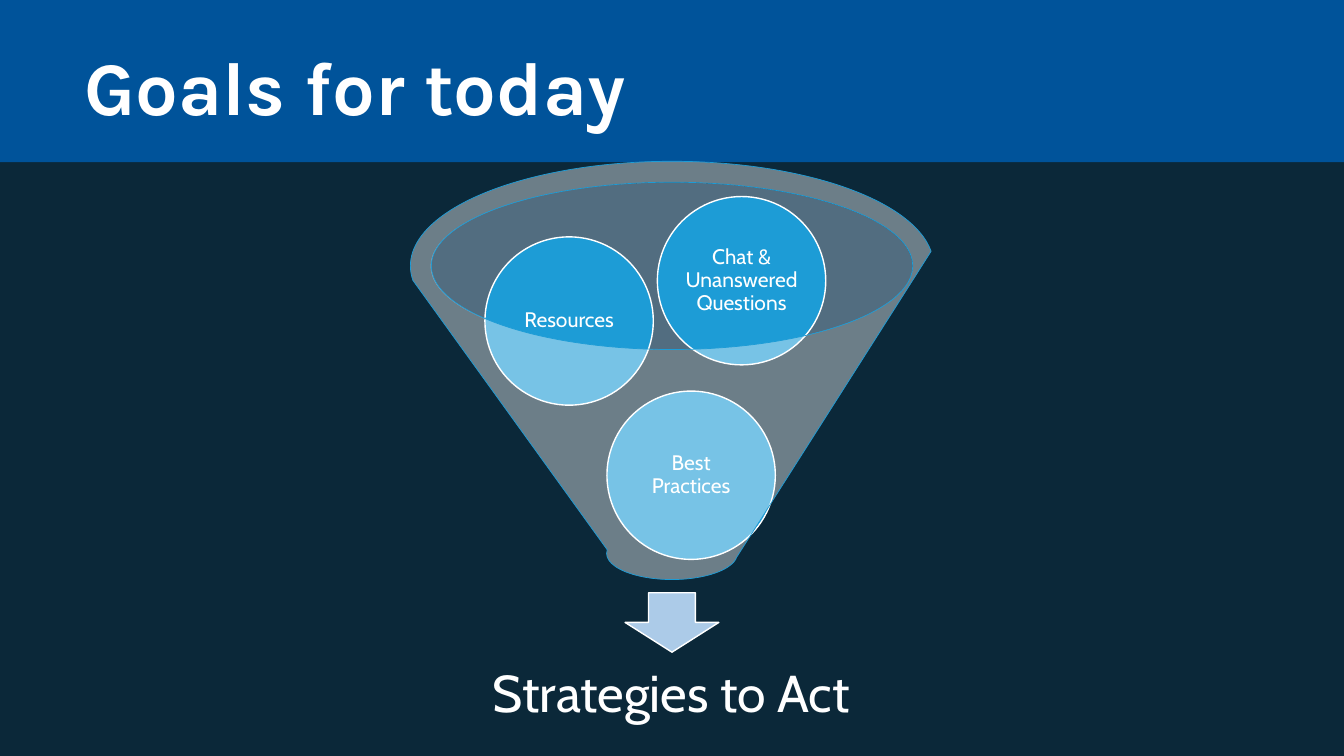
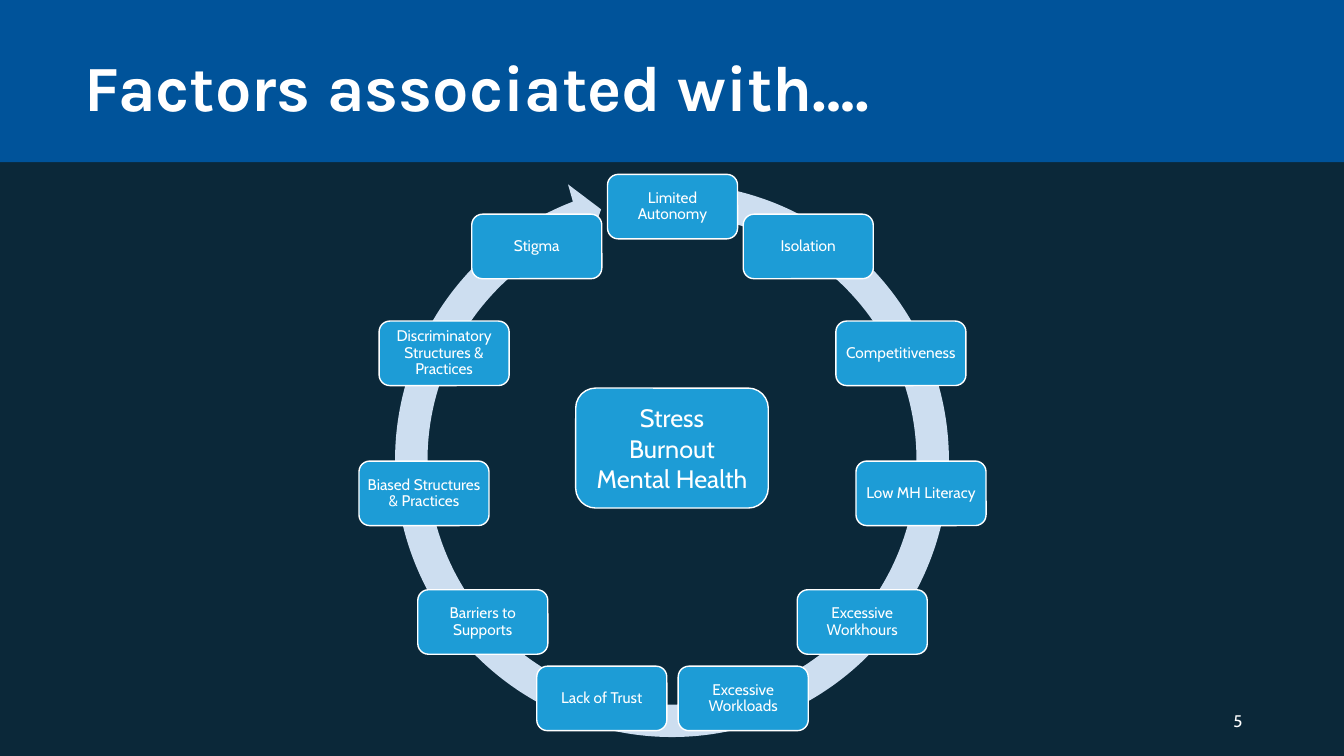
from math import cos, pi, sin

from lxml.etree import SubElement
from pptx import Presentation
from pptx.dml.color import RGBColor
from pptx.enum.shapes import MSO_SHAPE as Preset
from pptx.enum.text import MSO_ANCHOR as Anchor, PP_ALIGN as Align
from pptx.oxml.ns import qn
from pptx.util import Inches, Pt

# Shared look
NAVY = RGBColor(0x0B, 0x28, 0x39)
BAND_BLUE = RGBColor(0x00, 0x53, 0x9A)
BRIGHT_BLUE = RGBColor(0x1D, 0x9C, 0xD6)
MOUTH_BLUE = RGBColor(0xBD, 0xD5, 0xEC)
ARROW_BLUE = RGBColor(0xAC, 0xCB, 0xE8)
RING_BLUE = RGBColor(0xCD, 0xDE, 0xF0)
WHITE = RGBColor(0xFF, 0xFF, 0xFF)
TITLE_FONT, BODY_FONT = "Karla", "Cabin"
SLIDE_WIDTH, SLIDE_HEIGHT = 13.33, 7.5
BAND_HEIGHT = 1.61

# Slide 1: funnel
GOALS_TITLE = "Goals for today"
BALL_SIZE = 1.67
BALLS = [  # text, left, top
    ("Best Practices", 6.02, 3.88),
    ("Resources", 4.81, 2.35),
    ("Chat & Unanswered Questions", 6.52, 1.95),
]
OUTCOME = "Strategies to Act"

# Slide 2: ring of factors, clockwise from the top
FACTORS_TITLE = "Factors associated with…."
FACTORS = [
    "Limited Autonomy", "Isolation", "Competitiveness", "Low MH Literacy",
    "Excessive Workhours", "Excessive Workloads", "Lack of Trust",
    "Barriers to Supports", "Biased Structures & Practices",
    "Discriminatory Structures & Practices", "Stigma",
]
EFFECTS = ["Stress", "Burnout", "Mental Health"]
RING_X, RING_Y, RING_RADIUS = 6.67, 4.54, 2.49
CARD_WIDTH, CARD_HEIGHT = 1.29, 0.64
RING_ARROW = (0.055, 3.307, 149.224, 167.206, 0.058)
PAGE_NUMBER = "5"


def write(shape, lines, size, inset=None, align=Align.CENTER, spacing=0.9,
          font=BODY_FONT, bold=False):
    """Fill a shape with one paragraph per line."""
    frame = shape.text_frame
    frame.word_wrap = True
    frame.vertical_anchor = Anchor.MIDDLE
    if inset is not None:
        for side in ("left", "right", "top", "bottom"):
            setattr(frame, f"margin_{side}", Inches(inset))
    font_format = {"name": font, "size": Pt(size), "bold": bold}
    for index, line in enumerate(lines):
        paragraph = frame.add_paragraph() if index else frame.paragraphs[0]
        paragraph.alignment = align
        paragraph.line_spacing = spacing
        run = paragraph.add_run()
        run.text = line
        run.font.color.rgb = WHITE
        for name, value in font_format.items():
            setattr(run.font, name, value)


def add_text(slide, box, lines, size, **options):
    text_box = slide.shapes.add_textbox(*map(Inches, box))
    write(text_box, lines, size, **options)
    return text_box


def add_preset(slide, preset, box, fill, line=None, line_width=1, opacity=None):
    shape = slide.shapes.add_shape(preset, *map(Inches, box))
    shape.shadow.inherit = False
    shape.fill.solid()
    shape.fill.fore_color.rgb = fill
    if opacity is not None:
        color = shape.fill._xPr.find(f"{qn('a:solidFill')}/{qn('a:srgbClr')}")
        SubElement(color, qn("a:alpha"), val=str(opacity * 1000))
    if line is None:
        shape.line.fill.background()
    else:
        shape.line.color.rgb = line
        shape.line.width = Pt(line_width)
    return shape


def add_slide(presentation, title, title_size):
    """Blank slide with the shared background, band and title."""
    slide = presentation.slides.add_slide(presentation.slide_layouts[6])
    slide.background.fill.solid()
    slide.background.fill.fore_color.rgb = NAVY
    add_preset(slide, Preset.RECTANGLE, (0, 0, SLIDE_WIDTH, BAND_HEIGHT), BAND_BLUE)
    add_text(slide, (0.74, 0.51, 11.86, 0.78), [title], title_size,
             align=Align.LEFT, font=TITLE_FONT, bold=True)
    return slide


def build_goals(presentation):
    slide = add_slide(presentation, GOALS_TITLE, 54)
    # Funnel mouth, arrow and outcome
    add_preset(slide, Preset.OVAL, (4.27, 1.81, 4.78, 1.66), MOUTH_BLUE, opacity=40)
    add_preset(slide, Preset.DOWN_ARROW, (6.2, 5.88, 0.93, 0.59), ARROW_BLUE, WHITE)
    add_text(slide, (4.44, 6.35, 4.44, 1.11), [OUTCOME], 37, inset=0.29)
    # Balls, then the translucent funnel over them
    for text, left, top in BALLS:
        ball = add_preset(slide, Preset.OVAL, (left, top, BALL_SIZE, BALL_SIZE),
                          BRIGHT_BLUE, WHITE)
        write(ball, [text], 15, inset=0.02)
    add_preset(slide, Preset.FUNNEL, (4.07, 1.6, 5.19, 4.15), WHITE,
               BRIGHT_BLUE, line_width=0.5, opacity=40)


def build_factors(presentation):
    slide = add_slide(presentation, FACTORS_TITLE, 46)
    add_text(slide, (9.42, 6.95, 3, 0.4), [PAGE_NUMBER], 12,
             align=Align.RIGHT, spacing=1)
    # Circular arrow
    arrow = add_preset(slide, Preset.CIRCULAR_ARROW, (3.74, 1.64, 5.85, 5.85), RING_BLUE)
    for index, value in enumerate(RING_ARROW):
        arrow.adjustments[index] = value
    # Cards at equal angles
    for index, factor in enumerate(FACTORS):
        angle = 2 * pi * index / len(FACTORS)
        left = RING_X + RING_RADIUS * sin(angle) - CARD_WIDTH / 2
        top = RING_Y - RING_RADIUS * cos(angle) - CARD_HEIGHT / 2
        card = add_preset(slide, Preset.ROUNDED_RECTANGLE,
                          (left, top, CARD_WIDTH, CARD_HEIGHT), BRIGHT_BLUE, WHITE)
        write(card, [factor], 11, inset=0.05)
    # Centre card
    centre = add_preset(slide, Preset.ROUNDED_RECTANGLE, (5.71, 3.85, 1.91, 1.19),
                        BRIGHT_BLUE, WHITE)
    write(centre, EFFECTS, 18, spacing=1)


def main():
    presentation = Presentation()
    presentation.slide_width = Inches(SLIDE_WIDTH)
    presentation.slide_height = Inches(SLIDE_HEIGHT)
    build_goals(presentation)
    build_factors(presentation)
    presentation.save("out.pptx")


if __name__ == "__main__":
    main()
